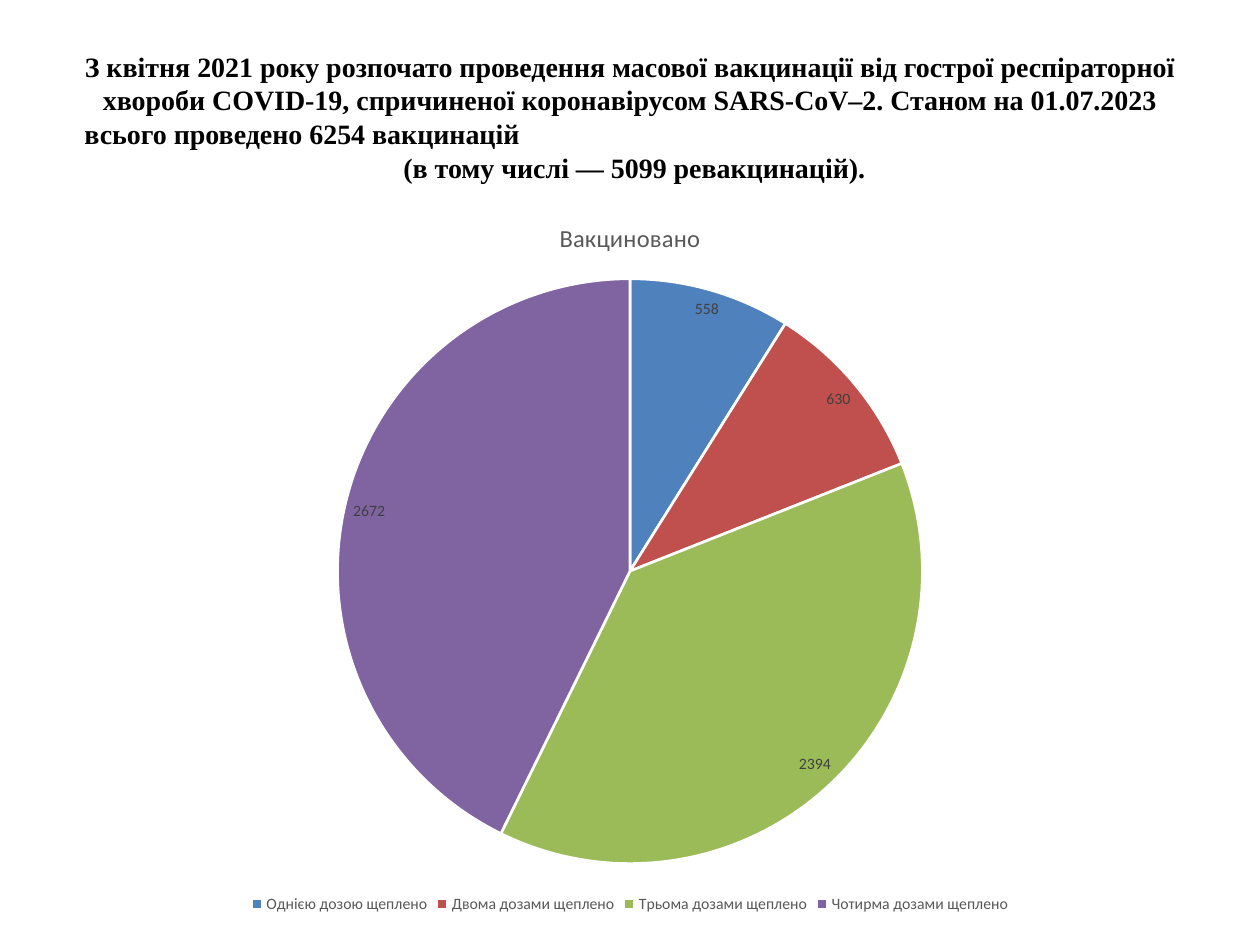
from dataclasses import dataclass
from typing import Any

import pptx
import pptx.chart.data
import pptx.dml.color
import pptx.enum.chart
import pptx.enum.text
import pptx.util

Inches = pptx.util.Inches
Align = pptx.enum.text.PP_ALIGN


@dataclass(frozen=True)
class Theme:
    title_font: str = "Times New Roman"
    chart_font: str = "Calibri"
    title_size: float = 16
    chart_title_size: float = 14
    small_size: float = 9
    black: str = "000000"
    muted: str = "595959"
    label: str = "404040"
    white: str = "FFFFFF"


@dataclass(frozen=True)
class TitleLine:
    text: str
    alignment: Any
    indent: float = 0


@dataclass(frozen=True)
class Dose:
    name: str
    people: int
    color: str


THEME = Theme()
TITLE_LINES = [
    TitleLine("З квітня 2021 року розпочато проведення масової вакцинації від гострої "
              "респіраторної хвороби COVID-19, спричиненої коронавірусом SARS-CoV–2. "
              "Станом на 01.07.2023", Align.CENTER),
    TitleLine("всього проведено 6254 вакцинацій", Align.LEFT, 0.07),
    TitleLine("(в тому числі — 5099 ревакцинацій).", Align.CENTER),
]
DOSES = [
    Dose("Однією дозою щеплено", 558, "4F81BD"),
    Dose("Двома дозами щеплено", 630, "C0504D"),
    Dose("Трьома дозами щеплено", 2394, "9BBB59"),
    Dose("Чотирма дозами щеплено", 2672, "8064A2"),
]


def rgb(color: str) -> pptx.dml.color.RGBColor:
    return pptx.dml.color.RGBColor.from_string(color)


def format_font(font: Any, name: str, size: float, color: str, bold: bool = False) -> None:
    values = {"name": name, "size": pptx.util.Pt(size), "bold": bold}
    for attribute, value in values.items():
        setattr(font, attribute, value)
    font.color.rgb = rgb(color)


def fill_title(title: Any) -> None:
    box = {"left": 0.5, "top": 0.3, "width": 9, "height": 1.25}
    for attribute, value in box.items():
        setattr(title, attribute, Inches(value))
    frame = title.text_frame
    frame.word_wrap = True
    frame.auto_size = pptx.enum.text.MSO_AUTO_SIZE.NONE
    frame.vertical_anchor = pptx.enum.text.MSO_ANCHOR.MIDDLE
    for index, line in enumerate(TITLE_LINES):
        paragraph = frame.add_paragraph() if index else frame.paragraphs[0]
        paragraph.alignment = line.alignment
        paragraph.space_before = pptx.util.Pt(0)
        if line.indent:
            paragraph._p.get_or_add_pPr().set("marL", str(Inches(line.indent)))
        run = paragraph.add_run()
        run.text = line.text
        format_font(run.font, THEME.title_font, THEME.title_size, THEME.black, True)


def add_dose_chart(slide: Any) -> None:
    data = pptx.chart.data.CategoryChartData()
    data.categories = [dose.name for dose in DOSES]
    data.add_series("Series 1", [dose.people for dose in DOSES])
    chart = slide.shapes.add_chart(
        pptx.enum.chart.XL_CHART_TYPE.PIE,
        Inches(0.5), Inches(1.55), Inches(9), Inches(5.74), data).chart
    format_font(chart.font, THEME.chart_font, 10, THEME.black)

    # Chart title and legend
    chart.has_title = True
    heading = chart.chart_title.text_frame
    heading.text = "Вакциновано"
    format_font(heading.paragraphs[0].runs[0].font, THEME.chart_font,
                THEME.chart_title_size, THEME.muted)
    chart.has_legend = True
    chart.legend.position = pptx.enum.chart.XL_LEGEND_POSITION.BOTTOM
    chart.legend.include_in_layout = False
    format_font(chart.legend.font, THEME.chart_font, THEME.small_size, THEME.muted)

    # Slices and their values
    plot = chart.plots[0]
    plot.vary_by_categories = True
    series = plot.series[0]
    for index, dose in enumerate(DOSES):
        slice_format = series.points[index].format
        slice_format.fill.solid()
        slice_format.fill.fore_color.rgb = rgb(dose.color)
        slice_format.line.color.rgb = rgb(THEME.white)
        slice_format.line.width = pptx.util.Pt(1.5)
    labels = series.data_labels
    labels.show_value = True
    labels.show_percentage = False
    labels.position = pptx.enum.chart.XL_LABEL_POSITION.BEST_FIT
    format_font(labels.font, THEME.chart_font, THEME.small_size, THEME.label)


def main() -> None:
    presentation = pptx.Presentation()
    presentation.slide_width = Inches(10)
    presentation.slide_height = Inches(7.5)
    slide = presentation.slides.add_slide(presentation.slide_layouts.get_by_name("Title Only"))
    fill_title(slide.shapes.title)
    add_dose_chart(slide)
    presentation.save("out.pptx")


if __name__ == "__main__":
    main()
